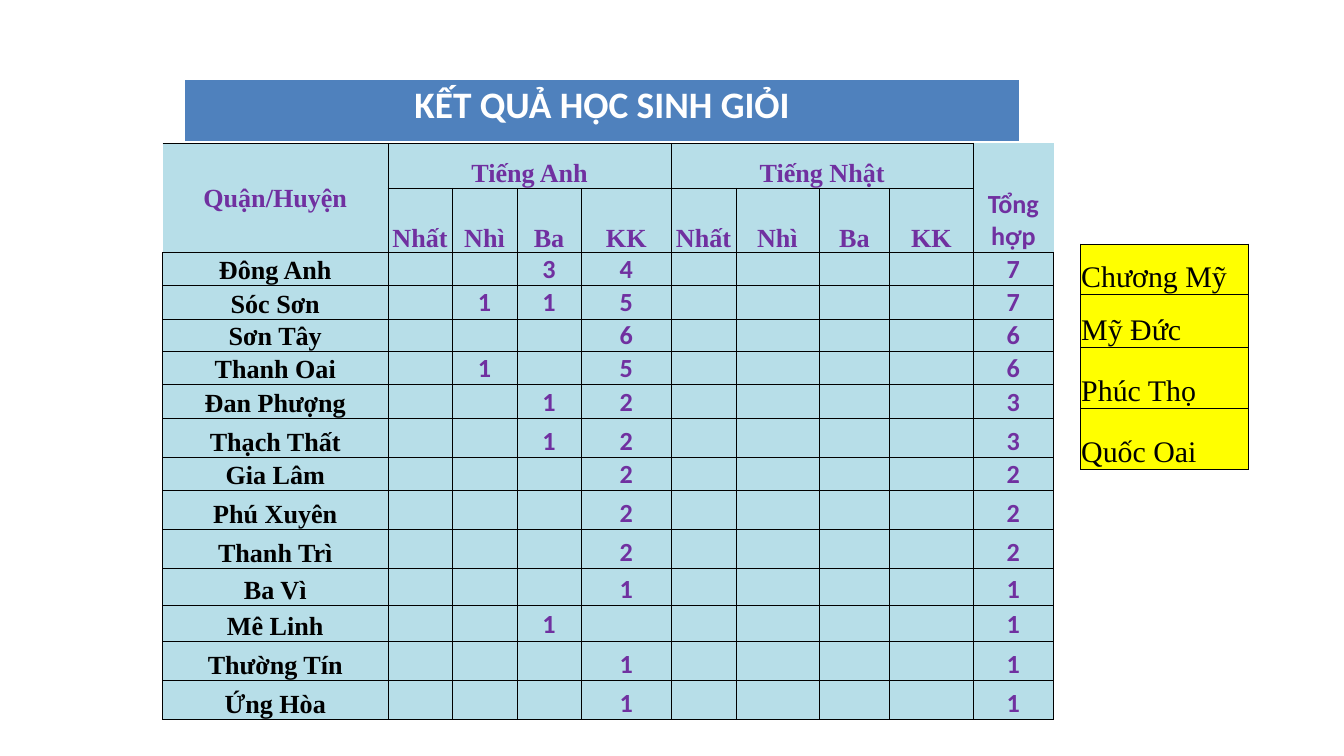
import pptx
import pptx.dml.color
import pptx.enum.text
import pptx.oxml
import pptx.oxml.ns
import pptx.util
from dataclasses import dataclass

Inches = pptx.util.Inches
Pt = pptx.util.Pt
Align = pptx.enum.text.PP_ALIGN
Anchor = pptx.enum.text.MSO_ANCHOR


@dataclass(frozen=True)
class Theme:
    sans: str = "Calibri"
    serif: str = "Times New Roman"
    white: str = "FFFFFF"
    black: str = "000000"
    blue: str = "4F81BD"
    pale: str = "B7DEE8"
    purple: str = "7030A0"
    yellow: str = "FFFF00"
    title: int = 40
    body: int = 28
    side: int = 32
    thin: float = 0.5


THEME = Theme()
PLAIN = "{2D5ABB26-0587-4C30-8999-92F81FD0307C}"  # no style, no grid
GRID = {side: THEME.thin for side in "LRTB"}
PRIZES = ["Nhất", "Nhì", "Ba", "KK"]
# District, then second, third and consolation prizes in English
SCORES = [
    ("Đông Anh", 0, 3, 4),
    ("Sóc Sơn", 1, 1, 5),
    ("Sơn Tây", 0, 0, 6),
    ("Thanh Oai", 1, 0, 5),
    ("Đan Phượng", 0, 1, 2),
    ("Thạch Thất", 0, 1, 2),
    ("Gia Lâm", 0, 0, 2),
    ("Phú Xuyên", 0, 0, 2),
    ("Thanh Trì", 0, 0, 2),
    ("Ba Vì", 0, 0, 1),
    ("Mê Linh", 0, 1, 0),
    ("Thường Tín", 0, 0, 1),
    ("Ứng Hòa", 0, 0, 1),
]
WIDTHS = [3.35, 0.96, 0.96, 0.96, 1.34, 0.96, 1.24, 1.05, 1.24, 1.2]
HEIGHTS = [0.67, 0.75, 0.45, 0.5, 0.42, 0.42, 0.51, 0.58,
           0.49, 0.58, 0.58, 0.55, 0.53, 0.59, 0.58]
SIDES = {"Chương Mỹ": 0.75, "Mỹ Đức": 0.79, "Phúc Thọ": 0.9, "Quốc Oai": 0.91}


def add_grid(slide, left, top, widths, heights):
    """Add an unstyled table with the given column widths and row heights."""
    frame = slide.shapes.add_table(
        len(heights), len(widths), Inches(left), Inches(top),
        Inches(sum(widths)), Inches(sum(heights)))
    table = frame.table
    table.first_row = table.horz_banding = False
    table._tbl.tblPr.find(pptx.oxml.ns.qn("a:tableStyleId")).text = PLAIN
    for col, width in zip(table.columns, widths):
        col.width = Inches(width)
    for row, height in zip(table.rows, heights):
        row.height = Inches(height)
    return table


def rule_cell(cell, color, lines):
    """Draw the sides named in lines (side to points); leave others bare."""
    props = cell._tc.get_or_add_tcPr()
    for side in "LRTB":
        paint = "<a:noFill/>"
        if side in lines:
            paint = f'<a:solidFill><a:srgbClr val="{color}"/></a:solidFill>'
        width = Pt(lines.get(side, 0))
        props.append(pptx.oxml.parse_xml(
            f'<a:ln{side} {pptx.oxml.ns.nsdecls("a")} w="{width}">'
            f"{paint}</a:ln{side}>"))


def fill_cell(cell, color):
    cell.fill.solid()
    cell.fill.fore_color.rgb = pptx.dml.color.RGBColor.from_string(color)


def pad_cell(cell):
    cell.margin_left = cell.margin_right = cell.margin_top = Inches(0.01)
    cell.margin_bottom = 0
    cell.vertical_anchor = Anchor.BOTTOM


def write_cell(cell, text, size, face, color, bold=True, align=Align.CENTER):
    cell.text = text
    para = cell.text_frame.paragraphs[0]
    para.alignment = align
    font = para.font
    font.size, font.name, font.bold = Pt(size), face, bold
    font.color.rgb = pptx.dml.color.RGBColor.from_string(color)


def add_title(slide):
    cell = add_grid(slide, 2.75, 1.18, [12.42], [0.94]).cell(0, 0)
    rule_cell(cell, THEME.white, {"L": 1, "R": 1, "T": 1, "B": 3})
    fill_cell(cell, THEME.blue)
    write_cell(cell, "KẾT QUẢ HỌC SINH GIỎI", THEME.title, THEME.sans, THEME.white)


def score_lines(row, col):
    """Name the ruled sides: the header's outer columns are partly open."""
    if row > 1:
        return GRID
    open_sides = {0: "L", 9: "RT" if row == 1 else "RTB"}.get(col, "")
    return {side: width for side, width in GRID.items() if side not in open_sides}


def score_rows():
    yield ["Quận/Huyện", "Tiếng Anh", "", "", "", "Tiếng Nhật", "", "", "", ""]
    yield ["", *PRIZES, *PRIZES, "Tổng hợp"]
    for name, *wins in SCORES:
        shown = [str(win or "") for win in wins]
        yield [name, "", *shown, "", "", "", "", str(sum(wins))]


def add_scores(slide):
    table = add_grid(slide, 2.42, 2.13, WIDTHS, HEIGHTS)
    for row, texts in enumerate(score_rows()):
        for col, text in enumerate(texts):
            cell = table.cell(row, col)
            rule_cell(cell, THEME.black, score_lines(row, col))
            fill_cell(cell, THEME.pale)
            pad_cell(cell)
            if text:
                serif = col == 0 or (row < 2 and col < 9)
                face = THEME.serif if serif else THEME.sans
                color = THEME.black if row > 1 and col == 0 else THEME.purple
                write_cell(cell, text, THEME.body, face, color)
    table.cell(0, 0).merge(table.cell(1, 0))
    table.cell(0, 0).vertical_anchor = Anchor.MIDDLE
    for col in (1, 5):
        table.cell(0, col).merge(table.cell(0, col + 3))


def add_sides(slide):
    table = add_grid(slide, 16.08, 3.63, [2.5], list(SIDES.values()))
    for row, name in enumerate(SIDES):
        cell = table.cell(row, 0)
        rule_cell(cell, THEME.black, GRID)
        fill_cell(cell, THEME.yellow)
        pad_cell(cell)
        write_cell(cell, name, THEME.side, THEME.serif, THEME.black,
                   bold=False, align=Align.LEFT)


def main():
    deck = pptx.Presentation()
    deck.slide_width, deck.slide_height = Inches(20), Inches(11.25)
    slide = deck.slides.add_slide(deck.slide_layouts[6])
    add_title(slide)
    add_scores(slide)
    add_sides(slide)
    deck.save("out.pptx")


if __name__ == "__main__":
    main()
